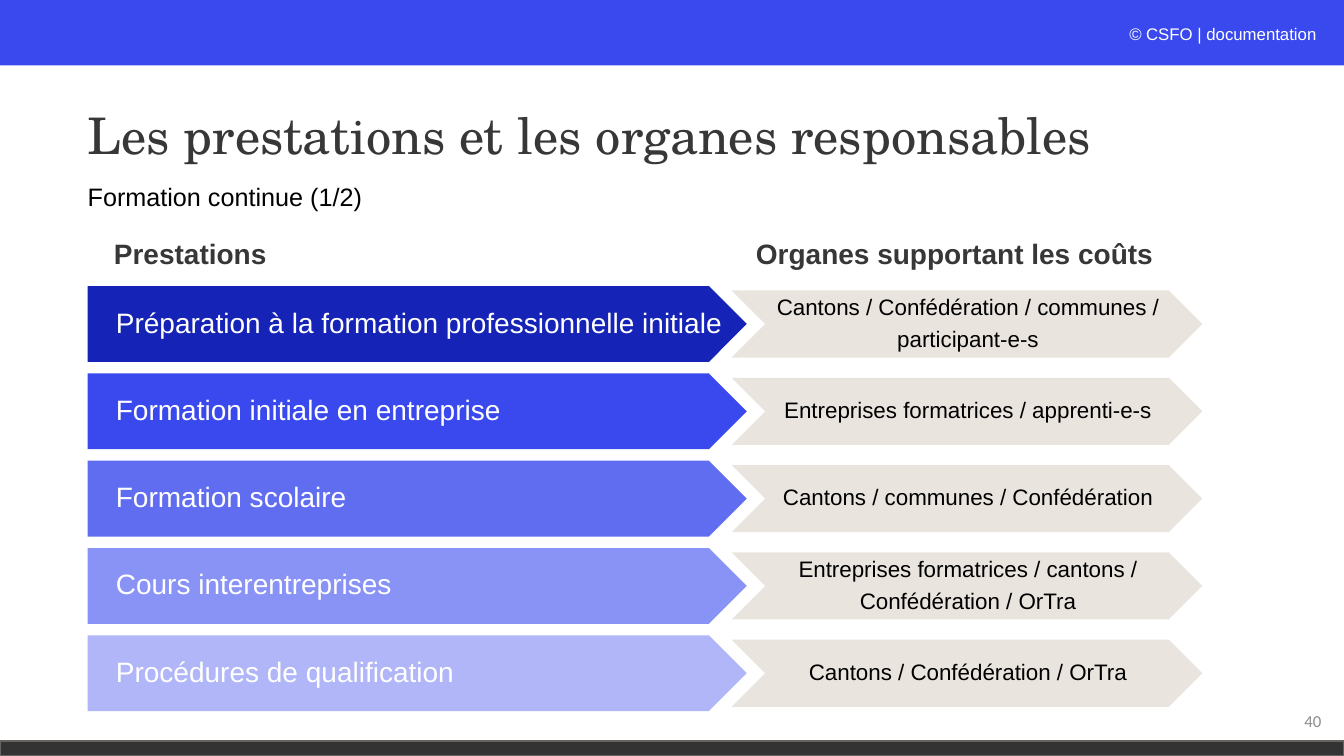
from lxml.etree import SubElement
from pptx import Presentation
from pptx.dml.color import RGBColor
from pptx.enum.shapes import MSO_SHAPE as Preset
from pptx.enum.text import MSO_ANCHOR as Anchor, PP_ALIGN as Align
from pptx.oxml.ns import qn
from pptx.util import Cm, Pt

SERVICES = [
    ("Préparation à la formation professionnelle initiale", "1623B7",
     "Cantons / Confédération / communes /\nparticipant-e-s"),
    ("Formation initiale en entreprise", "3A49EE",
     "Entreprises formatrices / apprenti-e-s"),
    ("Formation scolaire", "616DF1", "Cantons / communes / Confédération"),
    ("Cours interentreprises", "8992F5",
     "Entreprises formatrices / cantons /\nConfédération / OrTra"),
    ("Procédures de qualification", "B0B6F8", "Cantons / Confédération / OrTra"),
]
FIRST_TOP, ROW_PITCH = 7.21, 2.2
SERVICE_HEIGHT, PAYER_HEIGHT = 1.91, 1.69


def color(value):
    return RGBColor.from_string(value)


class SlideBuilder:
    font = "Arial"
    dark = "373737"

    def __init__(self, slide):
        self.slide = slide

    def set_text(self, shape, text, size, ink, font=None, bold=None, align=Align.LEFT,
                 anchor=Anchor.TOP, spacing=0.9, after=0):
        frame = shape.text_frame
        frame.word_wrap = True
        frame.vertical_anchor = anchor
        frame.text = text
        for paragraph in frame.paragraphs:
            paragraph.alignment = align
            paragraph.line_spacing = spacing
            paragraph.space_after = Pt(after)
            for run in paragraph.runs:
                self.style_run(run, size, ink, font, bold)

    def style_run(self, run, size, ink, font=None, bold=None):
        run.font.size = Pt(size)
        run.font.name = font or self.font
        run.font.bold = bold
        run.font.color.rgb = color(ink)

    def text(self, left, top, width, height, text, size, ink, **style):
        box = self.slide.shapes.add_textbox(Cm(left), Cm(top), Cm(width), Cm(height))
        self.set_text(box, text, size, ink, **style)
        return box

    def shape(self, preset, left, top, width, height, fill, line=None):
        shape = self.slide.shapes.add_shape(
            preset, Cm(left), Cm(top), Cm(width), Cm(height))
        shape.shadow.inherit = False
        shape.fill.solid()
        shape.fill.fore_color.rgb = color(fill)
        if line:
            shape.line.color.rgb = color(line)
            shape.line.width = Pt(1)
        else:
            shape.line.fill.background()
        return shape

    def arrow(self, preset, left, top, width, height, fill, text, size, ink,
              inset, align, after):
        shape = self.shape(preset, left, top, width, height, fill)
        frame = shape.text_frame
        frame.margin_left, frame.margin_right = Cm(inset), 0
        frame.margin_top = frame.margin_bottom = Cm(0.03)
        self.set_text(shape, text, size, ink, align=align, anchor=Anchor.MIDDLE,
                      after=after)
        return shape

    def fade(self, shape, percent):
        fill = shape.element.spPr.find(qn("a:solidFill"))
        SubElement(fill[0], qn("a:alpha"), val=str(percent * 1000))

    def service_row(self, top, service, fill, payers):
        self.arrow(Preset.PENTAGON, 2.21, top, 16.61, SERVICE_HEIGHT, fill,
                   service, 20, "FFFFFF", 0.71, Align.LEFT, 7)
        payer_top = top + (SERVICE_HEIGHT - PAYER_HEIGHT) / 2
        chevron = self.arrow(Preset.CHEVRON, 18.44, payer_top, 11.86, PAYER_HEIGHT,
                             "E8E2DB", payers, 16, "000000", 0.05, Align.CENTER, 5.6)
        self.fade(chevron, 90)


def main():
    presentation = Presentation()
    presentation.slide_width, presentation.slide_height = Cm(33.87), Cm(19.05)
    builder = SlideBuilder(presentation.slides.add_slide(presentation.slide_layouts[6]))

    builder.shape(Preset.RECTANGLE, 0, 0, 33.87, 1.65, "3A49EE")
    builder.shape(Preset.RECTANGLE, 0, 18.67, 33.87, 0.38, "333333", line="666360")
    credit = builder.text(21.9, 0.48, 11.65, 0.77, "© ", 12, "FCFDFE",
                          align=Align.RIGHT, spacing=1.0)
    paragraph = credit.text_frame.paragraphs[0]
    paragraph.runs[0].font.italic = True
    owner = paragraph.add_run()
    owner.text = "CSFO | documentation "
    builder.style_run(owner, 12, "FFFFFF")

    builder.text(1.96, 1.65, 27.51, 3.68, "Les prestations et les organes responsables",
                 36, builder.dark, font="TeX Gyre Schola", anchor=Anchor.MIDDLE)
    builder.text(1.96, 4.52, 22.38, 1.37, "Formation continue (1/2)", 18, "000000")

    for index, (service, fill, payers) in enumerate(SERVICES):
        builder.service_row(FIRST_TOP + index * ROW_PITCH, service, fill, payers)

    for left, width, heading in [(2.62, 6.43, "Prestations"),
                                 (18.8, 10.95, "Organes supportant les coûts")]:
        builder.text(left, 5.92, width, 1.3, heading, 20, builder.dark, bold=True)
    builder.text(25.93, 17.65, 7.62, 1.02, "40", 12, "8C8C8C", font="Calibri",
                 align=Align.RIGHT, anchor=Anchor.MIDDLE, spacing=1.0)

    presentation.save("out.pptx")


if __name__ == "__main__":
    main()
